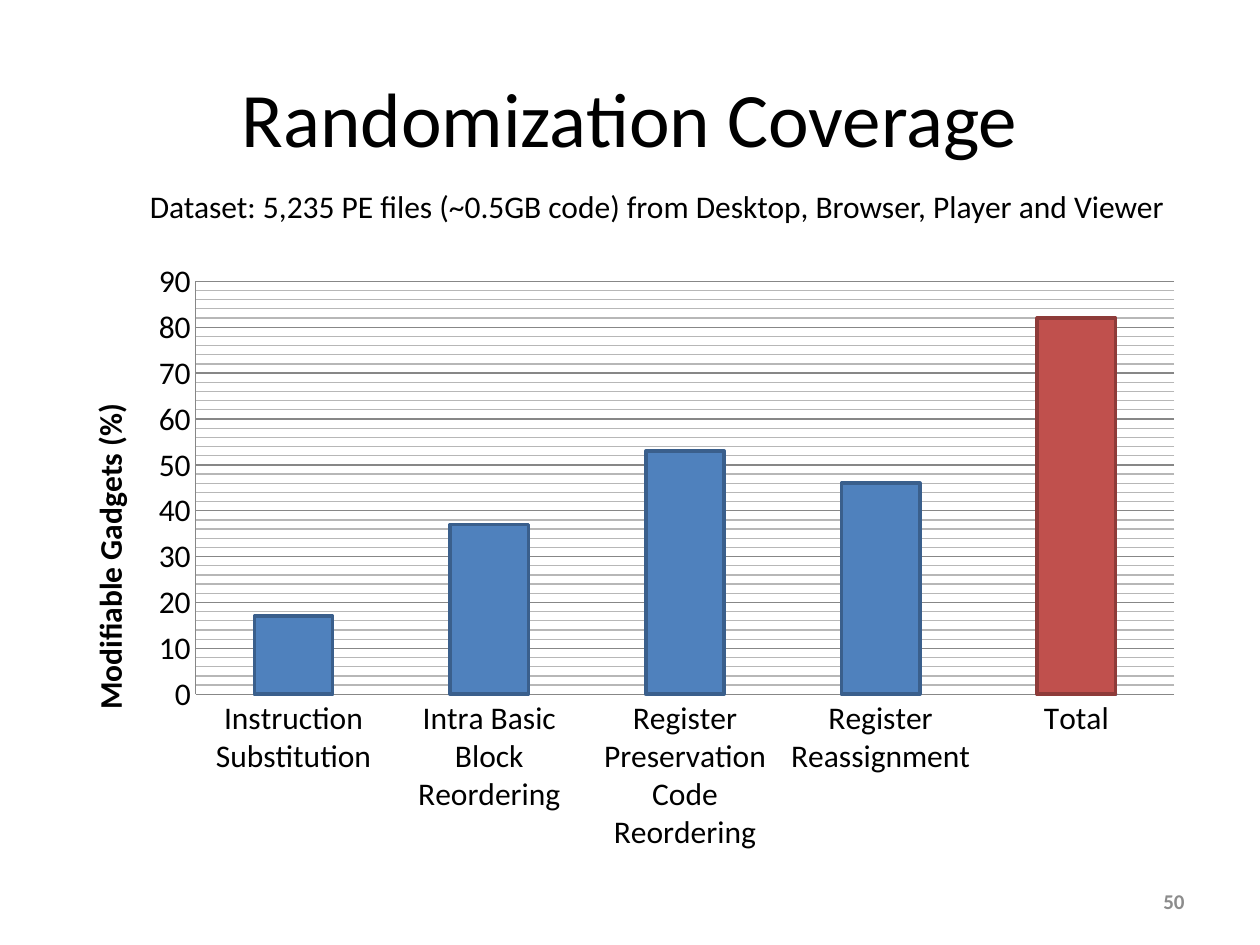
from dataclasses import dataclass

from lxml import etree
from pptx import Presentation
from pptx import util as u
from pptx.chart.data import CategoryChartData
from pptx.dml.color import RGBColor
from pptx.enum import chart as charts, text
from pptx.oxml.ns import qn


@dataclass(frozen=True)
class Theme:
    font: str = "Calibri"
    ink: str = "000000"
    muted: str = "8C8C8C"
    axis: str = "878787"
    minor_grid: str = "B7B7B7"
    title: int = 44
    body: int = 18
    small: int = 12


THEME = Theme()
CATEGORIES = ["Instruction Substitution", "Intra Basic Block Reordering",
              "Register Preservation Code Reordering",
              "Register Reassignment", "Total"]
# Name, values, fill, outline
SERIES = [
    ("Series 1", (17, 37, 53, 46, 0), "4F81BD", "3A5F8C"),
    ("Series 2", (0, 0, 0, 0, 82), "C0504D", "8E3B39"),
]


def rgb(code):
    return RGBColor.from_string(code)


def style_font(font, size, color=THEME.ink, bold=False):
    font.name, font.size, font.bold = THEME.font, u.Pt(size), bold
    font.color.rgb = rgb(color)


def style_line(line, color, width=0.75):
    line.color.rgb = rgb(color)
    line.width = u.Pt(width)


def add_text(page, area, words, size, align, anchor, wrap=True,
             color=THEME.ink, bold=False):
    box = page.shapes.add_textbox(*map(u.Cm, area))
    frame = box.text_frame
    frame.word_wrap, frame.vertical_anchor = wrap, anchor
    if not wrap:
        frame.auto_size = text.MSO_AUTO_SIZE.SHAPE_TO_FIT_TEXT
    para = frame.paragraphs[0]
    para.alignment = align
    span = para.add_run()
    span.text = words
    style_font(span.font, size, color, bold)


def set_layout(parent, index, inner=False, **fractions):
    """Place a chart part by fractions of the chart area."""
    for old in parent.findall(qn("c:layout")):
        parent.remove(old)
    layout = etree.Element(qn("c:layout"))
    manual = etree.SubElement(layout, qn("c:manualLayout"))
    if inner:
        etree.SubElement(manual, qn("c:layoutTarget")).set("val", "inner")
    for side in "xy":
        etree.SubElement(manual, qn(f"c:{side}Mode")).set("val", "edge")
    for side, value in fractions.items():
        etree.SubElement(manual, qn(f"c:{side}")).set("val", str(value))
    parent.insert(index, layout)


def add_header(page, left, top, width):
    add_text(page, (left, top, width, 3.18), "Randomization Coverage",
             THEME.title, text.PP_ALIGN.CENTER, text.MSO_ANCHOR.MIDDLE)
    add_text(page, (left + 1.5, top + 2.88, width - 1.5, 1.02),
             "Dataset: 5,235 PE files (~0.5GB code) from "
             "Desktop, Browser, Player and Viewer",
             THEME.body, text.PP_ALIGN.LEFT, text.MSO_ANCHOR.TOP, wrap=False)


def add_coverage_chart(page, left, top, width, height):
    data = CategoryChartData()
    data.categories = CATEGORIES
    for name, values, *_ in SERIES:
        data.add_series(name, values)
    chart = page.shapes.add_chart(
        charts.XL_CHART_TYPE.COLUMN_STACKED,
        *map(u.Cm, (left, top, width, height)), data).chart
    chart.has_legend = chart.has_title = False
    style_font(chart.font, THEME.body)

    # Columns
    plot = chart.plots[0]
    plot.gap_width, plot.overlap, plot.vary_by_categories = 150, 100, False
    for series, (_, _, fill, outline) in zip(plot.series, SERIES):
        series.format.fill.solid()
        series.format.fill.fore_color.rgb = rgb(fill)
        style_line(series.format.line, outline, 2)

    # Axes and gridlines
    scale = chart.value_axis
    for axis in (chart.category_axis, scale):
        axis.major_tick_mark = axis.minor_tick_mark = charts.XL_TICK_MARK.NONE
        style_line(axis.format.line, THEME.axis)
    scale.minimum_scale, scale.maximum_scale = 0, 90
    scale.major_unit, scale.minor_unit = 10, 2
    scale.has_major_gridlines = scale.has_minor_gridlines = True
    style_line(scale.major_gridlines.format.line, THEME.axis)
    plot_area = chart.element.find(".//" + qn("c:plotArea"))
    minor = plot_area.find(".//" + qn("c:minorGridlines"))
    look = etree.SubElement(minor, qn("c:spPr"))
    line = etree.SubElement(look, qn("a:ln"), w=str(u.Pt(0.75)))
    fill = etree.SubElement(line, qn("a:solidFill"))
    etree.SubElement(fill, qn("a:srgbClr"), val=THEME.minor_grid)

    # Axis title
    span = scale.axis_title.text_frame.paragraphs[0].add_run()
    span.text = "Modifiable Gadgets (%)"
    style_font(span.font, THEME.body, bold=True)
    title = plot_area.find(".//" + qn("c:title"))
    body = title.find(".//" + qn("a:bodyPr"))
    body.set("rot", "-5400000")
    body.set("vert", "horz")
    set_layout(title, 1, x=0.017, y=0.242)
    set_layout(plot_area, 0, inner=True, x=0.117, y=0.052, w=0.863, h=0.673)


def add_page_number(page, left, top, width, height):
    add_text(page, (left, top, width, height), "50", THEME.small,
             text.PP_ALIGN.RIGHT, text.MSO_ANCHOR.MIDDLE,
             color=THEME.muted, bold=True)


def main():
    deck = Presentation()
    deck.slide_width, deck.slide_height = u.Cm(25.4), u.Cm(19.05)
    page = deck.slides.add_slide(deck.slide_layouts[6])
    margin, width = 1.27, 22.86
    add_header(page, margin, 0.76, width)
    add_coverage_chart(page, margin, 5.03, width, 12.37)
    add_page_number(page, margin + width - 5.92, 17.65, 5.92, 1.02)
    deck.save("out.pptx")


if __name__ == "__main__":
    main()
